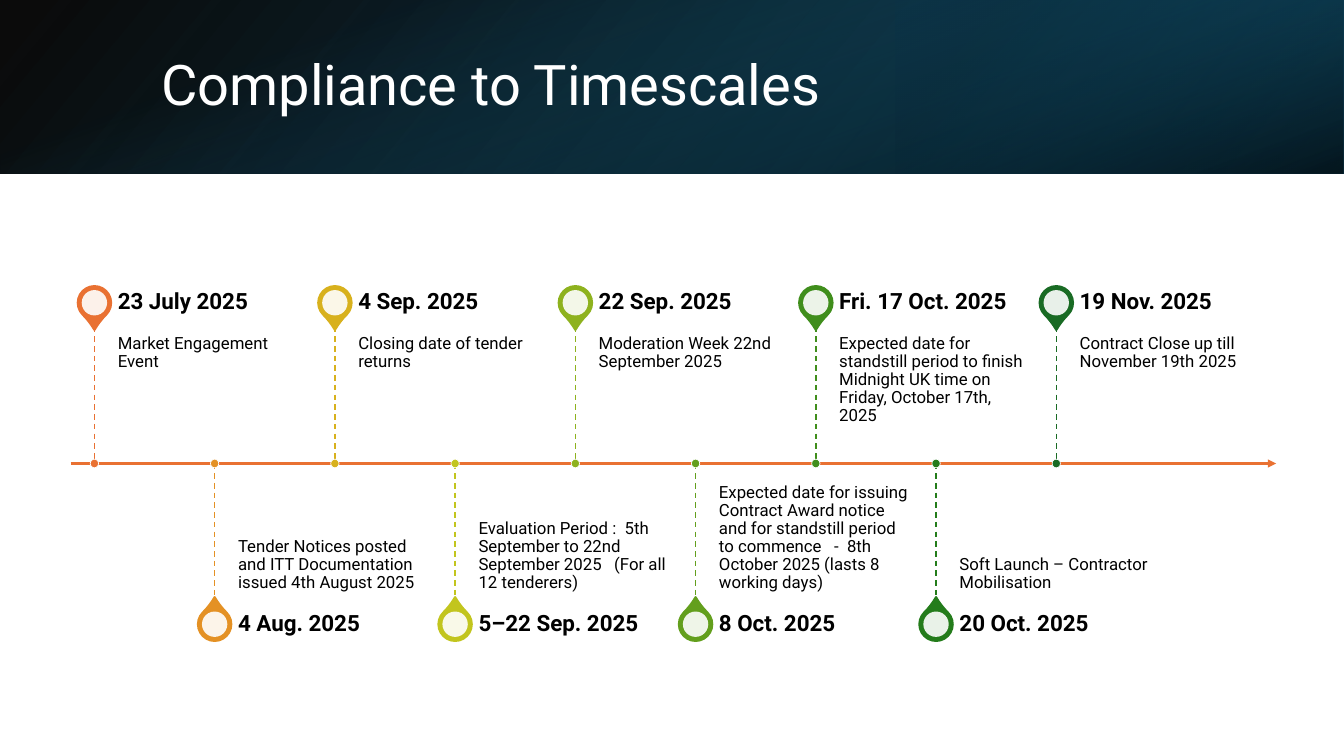
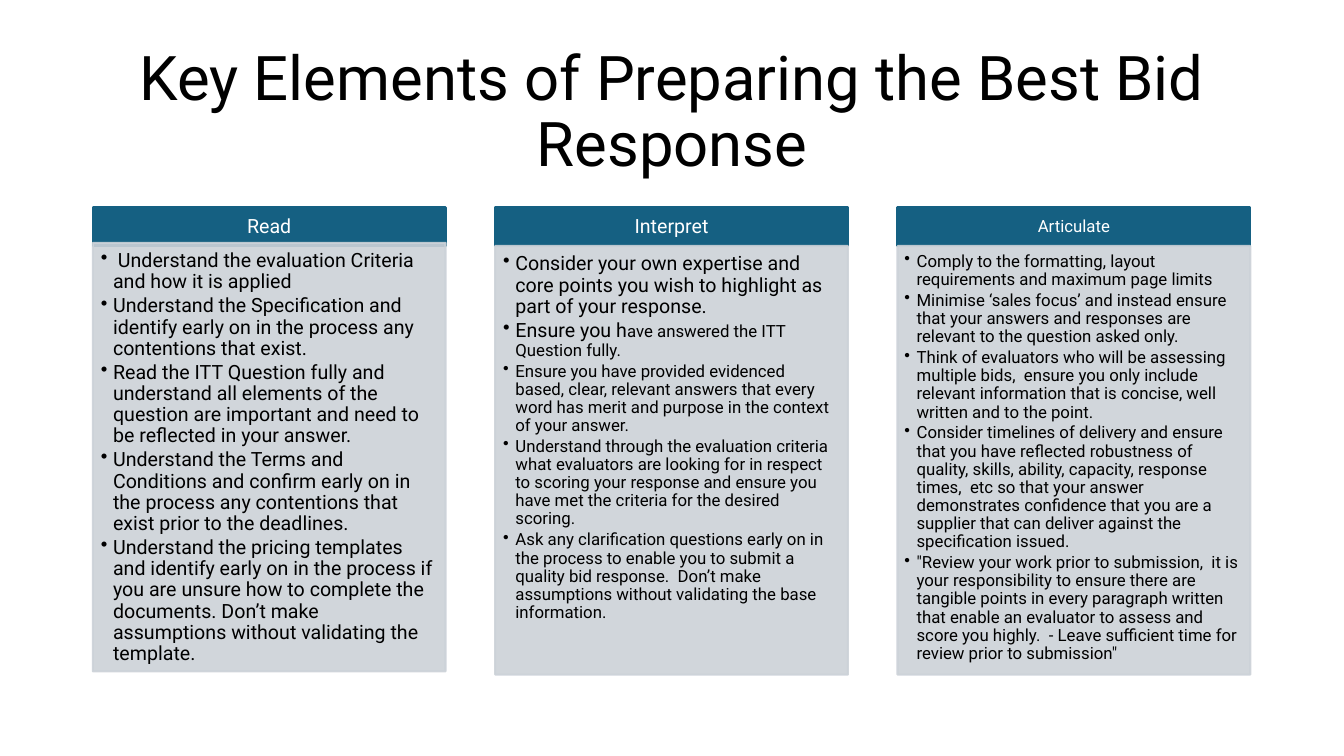
"""Build a tender timeline slide and a bid-response guidance slide."""
from lxml import etree
from pptx import Presentation
from pptx import util as u
from pptx.dml.color import RGBColor
from pptx.enum import dml, shapes, text
from pptx.oxml.ns import qn

FONT = "Roboto"
BLACK = RGBColor(0x00, 0x00, 0x00)
WHITE = RGBColor(0xFF, 0xFF, 0xFF)
TEAL = RGBColor(0x15, 0x60, 0x82)
DEEP_TEAL = RGBColor(0x10, 0x48, 0x62)
NIGHT_TEAL = RGBColor(0x0B, 0x30, 0x41)
PANEL = RGBColor(0xCC, 0xD2, 0xD8)
ORANGE = RGBColor(0xE9, 0x71, 0x32)
LEFT, CENTER = text.PP_ALIGN.LEFT, text.PP_ALIGN.CENTER
TOP, MIDDLE, BOTTOM = (text.MSO_ANCHOR.TOP, text.MSO_ANCHOR.MIDDLE,
                       text.MSO_ANCHOR.BOTTOM)
RECT, OVAL, TEARDROP = (shapes.MSO_SHAPE.RECTANGLE, shapes.MSO_SHAPE.OVAL,
                        shapes.MSO_SHAPE.TEAR)

TIMELINE_TITLE = "Compliance to Timescales"
MILESTONES = [
    ("23 July 2025", "Market Engagement Event", ORANGE),
    ("4 Aug. 2025",
     "Tender Notices posted and ITT Documentation issued 4th August 2025",
     RGBColor(0xE4, 0x91, 0x24)),
    ("4 Sep. 2025", "Closing date of tender returns",
     RGBColor(0xD8, 0xB1, 0x1D)),
    ("5–22 Sep. 2025",
     "Evaluation Period :  5th September to 22nd September 2025   "
     "(For all 12 tenderers)", RGBColor(0xC2, 0xC5, 0x1E)),
    ("22 Sep. 2025", "Moderation Week 22nd September 2025",
     RGBColor(0x8E, 0xB2, 0x1E)),
    ("8 Oct. 2025",
     "Expected date for issuing Contract Award notice and for standstill "
     "period to commence   -  8th October 2025 (lasts 8 working days)",
     RGBColor(0x63, 0x9F, 0x1D)),
    ("Fri. 17 Oct. 2025",
     "Expected date for standstill period to finish Midnight UK time on "
     "Friday, October 17th, 2025", RGBColor(0x40, 0x8E, 0x1C)),
    ("20 Oct. 2025", "Soft Launch – Contractor Mobilisation",
     RGBColor(0x24, 0x7C, 0x1B)),
    ("19 Nov. 2025", "Contract Close up till November 19th 2025",
     RGBColor(0x19, 0x6B, 0x24)),
]

BAND_LAYERS = [
    ((0, 0, 33.87, 4.37), 0, True, 140,
     [(0, BLACK, 96), (1, DEEP_TEAL, 100)]),
    ((22.58, 0, 11.29, 4.37), 180, True, 320,
     [(0.19, NIGHT_TEAL, 68), (1, TEAL, 79)]),
    ((14.75, -14.75, 4.37, 33.87), 90, False, 340,
     [(0.23, TEAL, 0), (0.99, BLACK, 74)]),
]

GUIDANCE_TITLE = "Key Elements of Preparing the Best Bid Response"
GUIDANCE = [
    ("Read", 14, 6.12, (0.2, 0.2, 0.28, 0.3), [
        [(" Understand the evaluation Criteria and how it is applied", 14)],
        [("Understand the Specification and identify early on in the process "
          "any contentions that exist.", 14)],
        [("Read the ITT Question fully and understand all elements of the "
          "question are important and need to be reflected in your answer.",
          14)],
        [("Understand the Terms and Conditions and confirm early on in the "
          "process any contentions that exist prior to the deadlines.", 14)],
        [("Understand the pricing templates and identify early on in the "
          "process if you are unsure how to complete the documents. Don’t "
          "make assumptions without validating the template.", 14)],
    ]),
    ("Interpret", 14, 6.2, (0.2, 0.2, 0.28, 0.3), [
        [("Consider your own expertise and core points you wish to highlight "
          "as part of your response.", 14)],
        [("Ensure you h", 14), ("ave answered the ITT Question fully.", 12)],
        [("Ensure you have provided evidenced based, clear, relevant answers "
          "that every word has merit and purpose in the context of your "
          "answer.", 12)],
        [("Understand through the evaluation criteria what evaluators are "
          "looking for in respect to scoring your response and ensure you "
          "have met the criteria for the desired scoring.", 12)],
        [("Ask any clarification questions early on in the process to enable "
          "you to submit a quality bid response.  Don’t make assumptions "
          "without validating the base information.", 12)],
    ]),
    ("Articulate", 12, 6.2, (0.17, 0.17, 0.24, 0.25), [
        [("Comply to the formatting, layout requirements and maximum page "
          "limits", 12)],
        [("Minimise ‘sales focus’ and instead ensure that your answers and "
          "responses are relevant to the question asked only.", 12)],
        [("Think of evaluators who will be assessing multiple bids,  ensure "
          "you only include relevant information that is concise, well "
          "written and to the point.", 12)],
        [("Consider timelines of delivery and ensure that you have reflected "
          "robustness of quality, skills, ability, capacity, response times,  "
          "etc so that your answer demonstrates confidence that you are a "
          "supplier that can deliver against the specification issued.", 12)],
        [("\"Review your work prior to submission,  it is your responsibility "
          "to ensure there are tangible points in every paragraph written "
          "that enable an evaluator to assess and score you highly.  - Leave "
          "sufficient time for review prior to submission\"", 12)],
    ]),
]


def cm(*values):
    return [u.Cm(value) for value in values]


def set_opacity(shape, *percents):
    colours = shape.element.spPr.iter(qn("a:srgbClr"))
    for colour, percent in zip(colours, percents):
        etree.SubElement(colour, qn("a:alpha"), val=str(percent * 1000))


def add_block(slide, kind, box, fill=None, line=None, weight=1.5):
    block = slide.shapes.add_shape(kind, *cm(*box))
    block.shadow.inherit = False
    if fill is not None:
        block.fill.solid()
        block.fill.fore_color.rgb = fill
    if line is None:
        block.line.fill.background()
    else:
        block.line.color.rgb = line
        block.line.width = u.Pt(weight)
    return block


def add_rule(slide, start, end, colour, weight):
    rule = slide.shapes.add_connector(shapes.MSO_CONNECTOR.STRAIGHT,
                                      *cm(*start, *end))
    rule.line.color.rgb = colour
    rule.line.width = u.Pt(weight)
    etree.SubElement(rule.element.spPr, qn("a:effectLst"))
    return rule


def write(frame, paragraphs, colour, align=LEFT, anchor=TOP, insets=None,
          bold=None, bulleted=False):
    frame.word_wrap = True
    frame.auto_size = text.MSO_AUTO_SIZE.NONE
    frame.vertical_anchor = anchor
    if insets:
        (frame.margin_left, frame.margin_top, frame.margin_right,
         frame.margin_bottom) = cm(*insets)
    for index, runs in enumerate(paragraphs):
        paragraph = frame.add_paragraph() if index else frame.paragraphs[0]
        paragraph.alignment = align
        paragraph.line_spacing = 0.9
        for words, size in runs:
            run = paragraph.add_run()
            run.text = words
            run.font.name = FONT
            run.font.size = u.Pt(size)
            run.font.bold = bold
            run.font.color.rgb = colour
        if bulleted:
            paragraph.space_after = u.Pt(2)
            properties = paragraph._p.get_or_add_pPr()
            properties.set("marL", str(u.Cm(0.31)))
            properties.set("indent", str(-u.Cm(0.31)))
            etree.SubElement(properties, qn("a:buChar"), char="•")


def add_title(slide, words, box, size, colour, align):
    title = slide.shapes.title
    title.left, title.top, title.width, title.height = cm(*box)
    write(title.text_frame, [[(words, size)]], colour, align, MIDDLE)
    title.element.getparent().append(title.element)


def add_band(slide):
    for box, rotation, flipped, angle, stops in BAND_LAYERS:
        layer = add_block(slide, RECT, box)
        layer.rotation = rotation
        if flipped:
            layer.element.spPr.find(qn("a:xfrm")).set("flipH", "1")
        layer.fill.gradient()
        layer.fill.gradient_angle = 360 - angle
        for stop, (position, colour, _) in zip(layer.fill.gradient_stops,
                                               stops):
            stop.color.rgb = colour
            stop.position = position
        set_opacity(layer, *[stop[2] for stop in stops])


def add_label(slide, box, words, size, **style):
    label = slide.shapes.add_textbox(*cm(*box))
    write(label.text_frame, [[(words, size)]], BLACK, **style)


def centred(x, y, width, height):
    return x - width / 2, y - height / 2, width, height


def add_milestone(slide, index, date, event, colour):
    axis, stem, date_height, label_width = 11.68, 3.45, 1.22, 4.9
    x = 2.38 + 3.03 * index
    above = index % 2 == 0
    side = -1 if above else 1
    tip, pin_y = axis + side * stem, axis + side * 4.05

    pin = add_block(slide, TEARDROP, centred(x, pin_y, 0.84, 0.84),
                    colour, colour)
    pin.adjustments[0] = 1.15
    pin.rotation = 135 if above else 315
    hole = add_block(slide, OVAL, centred(x, pin_y, 0.64, 0.64), WHITE)
    set_opacity(hole, 90)

    label_x = x + 0.59
    add_label(slide, (label_x, min(axis, tip), label_width, stem), event, 12,
              anchor=TOP if above else BOTTOM,
              insets=(0, 0.2, 0.2, 0.3) if above else (0, 0.3, 0, 0.2))
    add_label(slide, (label_x, tip - date_height if above else tip,
                      label_width, date_height), date, 16,
              anchor=MIDDLE, insets=(0, 0, 0.28, 0), bold=True)

    guide = add_rule(slide, (x, min(axis, tip)), (x, max(axis, tip)),
                     colour, 1)
    guide.line.dash_style = dml.MSO_LINE.DASH
    add_block(slide, OVAL, centred(x, axis, 0.21, 0.22), colour, WHITE, 0.5)


def build_timeline(slide):
    add_band(slide)
    add_title(slide, TIMELINE_TITLE, (3.81, 0.97, 27.89, 2.44), 40, WHITE,
              LEFT)
    arrow = add_rule(slide, (1.78, 11.68), (32.16, 11.68), ORANGE, 1.5)
    etree.SubElement(arrow.line._get_or_add_ln(), qn("a:tailEnd"),
                     type="triangle")
    for index, milestone in enumerate(MILESTONES):
        add_milestone(slide, index, *milestone)


def build_guidance(slide):
    add_title(slide, GUIDANCE_TITLE, (2.34, 1.02, 29.21, 3.68), 44, BLACK,
              CENTER)
    for index, (heading, size, top, insets, advice) in enumerate(GUIDANCE):
        left, width = 2.34 + 10.14 * index, 8.89
        header = add_block(slide, RECT, (left, 5.23, width, 0.97), TEAL, TEAL)
        write(header.text_frame, [[(heading, size)]], WHITE, CENTER, MIDDLE,
              (0.28, 0.15, 0.28, 0.15))
        panel = add_block(slide, RECT, (left, top, width, 10.8), PANEL, PANEL)
        set_opacity(panel, 90, 90)
        write(panel.text_frame, advice, BLACK, insets=insets, bulleted=True)


def main():
    deck = Presentation()
    deck.slide_width, deck.slide_height = cm(33.87, 19.05)
    title_only = deck.slide_layouts[5]
    for build in (build_timeline, build_guidance):
        build(deck.slides.add_slide(title_only))
    deck.save("out.pptx")


if __name__ == "__main__":
    main()
